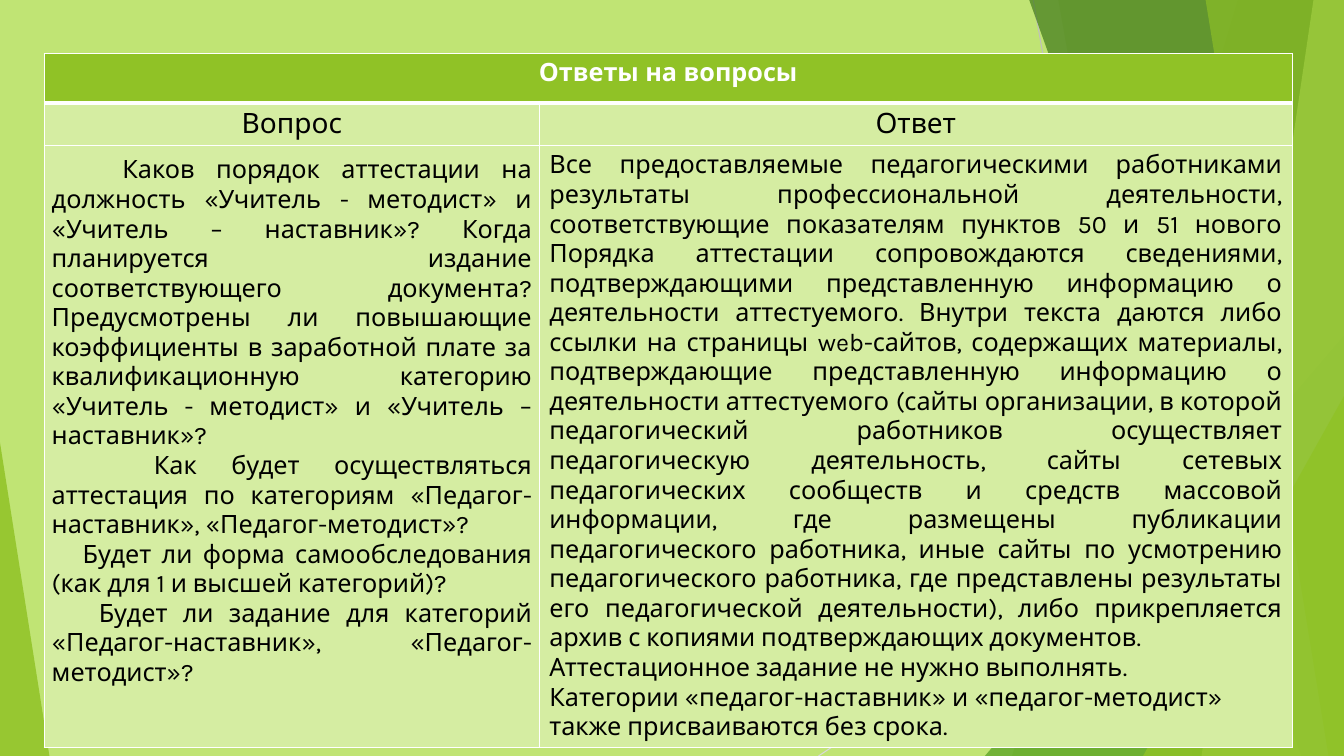
"""Build the slide with answers to questions about teacher certification."""
from dataclasses import dataclass

from lxml import etree
from pptx import Presentation
from pptx.dml.color import RGBColor
from pptx.enum.shapes import MSO_CONNECTOR, MSO_SHAPE
from pptx.enum.text import PP_ALIGN
from pptx.oxml.ns import qn
from pptx.util import Emu, Inches, Pt

TRIANGLE = MSO_SHAPE.ISOSCELES_TRIANGLE
STRAIGHT = MSO_CONNECTOR.STRAIGHT
LEFT, CENTER, JUSTIFY = PP_ALIGN.LEFT, PP_ALIGN.CENTER, PP_ALIGN.JUSTIFY
WIDTH, HEIGHT = Inches(13.33), Inches(7.5)


@dataclass(frozen=True)
class Theme:
    """Colours, font and type sizes of the slide."""
    backdrop: str = "C0E474"
    accent: str = "90C226"
    leaf: str = "54A021"
    forest: str = "3F7819"
    pale: str = "D5EDA2"
    white: str = "FFFFFF"
    black: str = "000000"
    gray: str = "BFBFBF"
    silver: str = "D9D9D9"
    font: str = "Karla"
    body: int = 18
    heading: int = 20


@dataclass(frozen=True)
class Ray:
    """A thin line between two points in percent of the slide."""
    start: tuple[float, float]
    end: tuple[float, float]
    color: str


@dataclass(frozen=True)
class Band:
    """A full-height area from a slanted left edge to the right slide edge."""
    top: float
    bottom: float
    color: str
    opacity: int


@dataclass(frozen=True)
class Wedge:
    """A triangle standing on the bottom of the slide, apex at a share of its width."""
    left: float
    top: float
    width: float
    apex: int
    color: str
    opacity: int


@dataclass(frozen=True)
class Passage:
    """One paragraph with its alignment and first-line indent in percent."""
    text: str
    align: PP_ALIGN = JUSTIFY
    indent: float = 0


@dataclass(frozen=True)
class Entry:
    """The content and look of one table cell."""
    passages: tuple[Passage, ...]
    fill: str
    color: str
    size: int
    bold: bool = False


THEME = Theme()
RAYS = (
    Ray((76.88, 0), (86.85, 100), THEME.gray),
    Ray((100, 53.73), (60.9, 100), THEME.silver),
)
FACETS = (
    Band(92.1, 75.3, THEME.accent, 30),
    Band(78.75, 88.73, THEME.accent, 20),
    Wedge(73.28, 44.4, 26.72, 1, THEME.leaf, 72),
    Band(76.58, 96.83, THEME.forest, 70),
    Band(97.73, 89.4, THEME.backdrop, 70),
    Band(89.7, 98.85, THEME.accent, 65),
    Wedge(85.05, 52.4, 14.95, 1, THEME.accent, 80),
    Wedge(0, 58.53, 3.68, 0, THEME.accent, 85),
)
TABLE_LEFT, TABLE_TOP = 3.3, 7.07
COLUMNS, ROWS = (36.83, 56.03), (6.53, 5.07, 69.2)
QUESTIONS = (
    Passage("Каков порядок аттестации на должность «Учитель - методист» и «Учитель – наставник»? "
            "Когда планируется издание соответствующего документа? Предусмотрены ли повышающие "
            "коэффициенты в заработной плате за квалификационную категорию «Учитель - методист» "
            "и «Учитель – наставник»?", indent=5.25),
    Passage("Как будет осуществляться аттестация по категориям «Педагог-наставник», "
            "«Педагог-методист»?", indent=7.6),
    Passage("Будет ли форма самообследования (как для 1 и высшей категорий)?", indent=2.3),
    Passage("Будет ли задание для категорий «Педагог-наставник», «Педагог-методист»?", indent=3.5),
)
EVIDENCE = ("Все предоставляемые педагогическими работниками результаты профессиональной "
            "деятельности, соответствующие показателям пунктов 50 и 51 нового Порядка аттестации "
            "сопровождаются сведениями, подтверждающими представленную информацию о деятельности "
            "аттестуемого.")
LINKS = ("Внутри текста даются либо ссылки на страницы web-сайтов, содержащих "
         "материалы, подтверждающие представленную информацию о деятельности аттестуемого "
         "(сайты организации, в которой педагогический работников осуществляет педагогическую "
         "деятельность, сайты сетевых педагогических сообществ и средств массовой информации, "
         "где размещены публикации педагогического работника, иные сайты по усмотрению "
         "педагогического работника, где представлены результаты его педагогической "
         "деятельности), либо прикрепляется архив с копиями подтверждающих документов.")
ANSWERS = (
    Passage(f"{EVIDENCE} {LINKS}"),
    Passage("Аттестационное задание не нужно выполнять.", LEFT),
    Passage("Категории «педагог-наставник» и «педагог-методист» также присваиваются без срока.",
            LEFT),
)


def across(percent: float) -> Emu:
    """Turn a percentage of the slide width into a length."""
    return Emu(round(WIDTH * percent / 100))


def down(percent: float) -> Emu:
    """Turn a percentage of the slide height into a length."""
    return Emu(round(HEIGHT * percent / 100))


def draw_ray(page, ray: Ray) -> None:
    """Draw one thin line without a shadow."""
    line = page.shapes.add_connector(STRAIGHT, across(ray.start[0]), down(ray.start[1]),
                                     across(ray.end[0]), down(ray.end[1]))
    line.line.color.rgb = RGBColor.from_string(ray.color)
    line.line.width = Pt(0.75)
    etree.SubElement(line._element.spPr, qn("a:effectLst"))


def draw_facet(page, facet: Band | Wedge) -> None:
    """Draw one translucent band or wedge."""
    if isinstance(facet, Band):
        builder = page.shapes.build_freeform(across(facet.top), 0)
        builder.add_line_segments([(WIDTH, 0), (WIDTH, HEIGHT), (across(facet.bottom), HEIGHT)])
        shape = builder.convert_to_shape()
    else:
        shape = page.shapes.add_shape(TRIANGLE, across(facet.left), down(facet.top),
                                      across(facet.width), down(100 - facet.top))
        shape.adjustments[0] = facet.apex
    shape.shadow.inherit = False
    shape.line.fill.background()
    shape.fill.solid()
    shape.fill.fore_color.rgb = RGBColor.from_string(facet.color)
    color = shape._element.spPr.find(qn("a:solidFill"))[0]
    etree.SubElement(color, qn("a:alpha"), val=str(facet.opacity * 1000))


def set_borders(cell, top: float, bottom: float) -> None:
    """Give a cell white borders with the given top and bottom widths in points."""
    properties = cell._tc.get_or_add_tcPr()
    widths = {"a:lnL": 1, "a:lnR": 1, "a:lnT": top, "a:lnB": bottom}
    for position, (tag, width) in enumerate(widths.items()):
        border = etree.Element(qn(tag), w=str(Pt(width)))
        fill = etree.SubElement(border, qn("a:solidFill"))
        etree.SubElement(fill, qn("a:srgbClr"), val=THEME.white)
        properties.insert(position, border)


def fill_cell(cell, entry: Entry) -> None:
    """Write the passages of an entry into a cell and colour it."""
    cell.fill.solid()
    cell.fill.fore_color.rgb = RGBColor.from_string(entry.fill)
    frame = cell.text_frame
    for number, passage in enumerate(entry.passages):
        para = frame.add_paragraph() if number else frame.paragraphs[0]
        para.text = passage.text
        para.alignment = passage.align
        if passage.indent:
            para._p.get_or_add_pPr().set("indent", str(across(passage.indent)))
        para.font.name, para.font.size = THEME.font, Pt(entry.size)
        para.font.bold = entry.bold
        para.font.color.rgb = RGBColor.from_string(entry.color)


def draw_table(page) -> None:
    """Draw the table of questions and answers."""
    table = page.shapes.add_table(len(ROWS), len(COLUMNS), across(TABLE_LEFT), down(TABLE_TOP),
                                  across(sum(COLUMNS)), down(sum(ROWS))).table
    table.first_row = table.horz_banding = False
    for column, share in zip(table.columns, COLUMNS):
        column.width = across(share)
    for row, share in zip(table.rows, ROWS):
        row.height = down(share)
    table.cell(0, 0).merge(table.cell(0, 1))
    title = Passage("Ответы на вопросы", CENTER)
    fill_cell(table.cell(0, 0), Entry((title,), THEME.accent, THEME.white, THEME.body, True))
    for column, (heading, passages) in enumerate((("Вопрос", QUESTIONS), ("Ответ", ANSWERS))):
        label = Entry((Passage(heading, CENTER),), THEME.pale, THEME.black, THEME.heading)
        fill_cell(table.cell(1, column), label)
        fill_cell(table.cell(2, column), Entry(passages, THEME.pale, THEME.black, THEME.body))
        for row, (top, bottom) in enumerate(((1, 3), (3, 1), (1, 1))):
            set_borders(table.cell(row, column), top, bottom)
    question = table.cell(2, 0)
    question.margin_left = question.margin_right = across(0.55)
    question.margin_top, question.margin_bottom = down(1.33), 0


def main() -> None:
    """Build and save the deck."""
    deck = Presentation()
    deck.slide_width, deck.slide_height = WIDTH, HEIGHT
    page = deck.slides.add_slide(deck.slide_layouts[6])
    page.background.fill.solid()
    page.background.fill.fore_color.rgb = RGBColor.from_string(THEME.backdrop)
    for ray in RAYS:
        draw_ray(page, ray)
    for facet in FACETS:
        draw_facet(page, facet)
    draw_table(page)
    deck.save("out.pptx")


if __name__ == "__main__":
    main()
